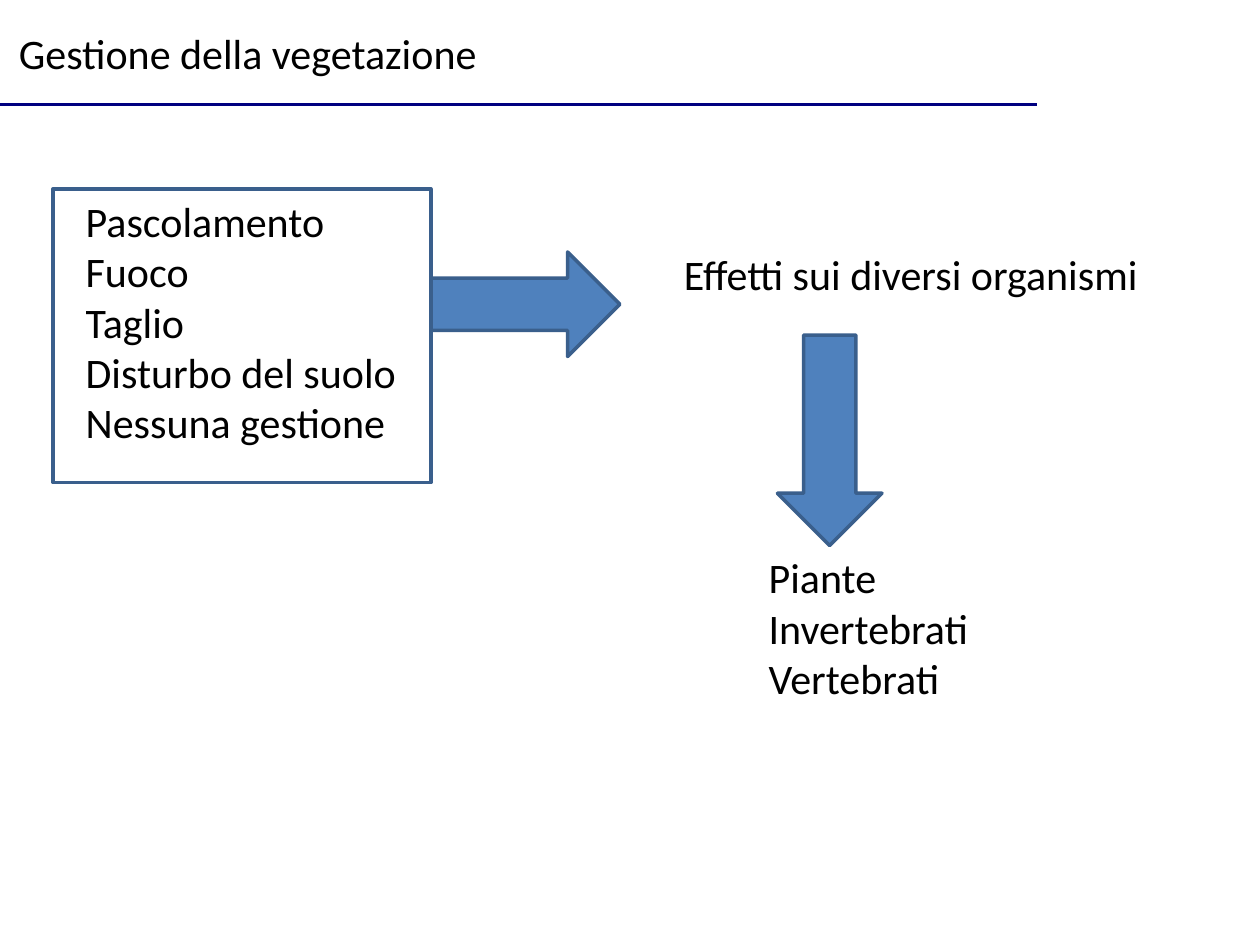
from lxml import etree
from pptx import Presentation
from pptx.dml.color import RGBColor
from pptx.enum.shapes import MSO_CONNECTOR, MSO_SHAPE
from pptx.enum.text import MSO_ANCHOR, MSO_AUTO_SIZE, PP_ALIGN
from pptx.oxml.ns import qn
from pptx.util import Inches, Pt

STRAIGHT = MSO_CONNECTOR.STRAIGHT
RIGHT_ARROW = MSO_SHAPE.RIGHT_ARROW
RECTANGLE = MSO_SHAPE.RECTANGLE
TOP = MSO_ANCHOR.TOP
NO_AUTO_SIZE = MSO_AUTO_SIZE.NONE
LEFT = PP_ALIGN.LEFT

FONT = "Calibri"
TEXT_SIZE = 24
LINE_WIDTH = 2
BLACK = "000000"
NAVY = "000080"
BLUE = "4F81BD"
DARK_BLUE = "3A5F8C"

MANAGEMENT = ["Pascolamento", "Fuoco", "Taglio", "Disturbo del suolo", "Nessuna gestione"]
ORGANISMS = ["Piante", "Invertebrati", "Vertebrati"]


def set_color(color_format, color):
    color_format.rgb = RGBColor.from_string(color)


def set_line(line, color):
    set_color(line.color, color)
    line.width = Pt(LINE_WIDTH)


def place(shape, left, top, width, height):
    shape.left, shape.top = Inches(left), Inches(top)
    shape.width, shape.height = Inches(width), Inches(height)


def remove_bullet(paragraph):
    properties = paragraph._p.get_or_add_pPr()
    properties.set("marL", "0")
    properties.set("indent", "0")
    etree.SubElement(properties, qn("a:buNone"))


def write_lines(shape, lines, wrap=True):
    text_frame = shape.text_frame
    text_frame.word_wrap = wrap
    text_frame.auto_size = NO_AUTO_SIZE
    text_frame.vertical_anchor = TOP
    for index, line in enumerate(lines):
        paragraph = text_frame.add_paragraph() if index else text_frame.paragraphs[0]
        paragraph.alignment = LEFT
        paragraph.space_before = Pt(0)
        remove_bullet(paragraph)
        run = paragraph.add_run()
        run.text = line
        run.font.name = FONT
        run.font.size = Pt(TEXT_SIZE)
        set_color(run.font.color, BLACK)


def fill_placeholder(shape, lines, left, top, width, height, wrap=True):
    place(shape, left, top, width, height)
    write_lines(shape, lines, wrap)


def add_text(slide, lines, left, top, width, height):
    shape = slide.shapes.add_textbox(
        Inches(left), Inches(top), Inches(width), Inches(height))
    write_lines(shape, lines)


def add_rule(slide, left, right, top):
    connector = slide.shapes.add_connector(
        STRAIGHT, Inches(left), Inches(top), Inches(right), Inches(top))
    set_line(connector.line, NAVY)
    etree.SubElement(connector._element.spPr, qn("a:effectLst"))


def add_outlined_shape(slide, kind, left, top, width, height, fill=None, rotation=0):
    shape = slide.shapes.add_shape(
        kind, Inches(left), Inches(top), Inches(width), Inches(height))
    shape.shadow.inherit = False
    shape.rotation = rotation
    if fill:
        shape.fill.solid()
        set_color(shape.fill.fore_color, fill)
    else:
        shape.fill.background()
    set_line(shape.line, DARK_BLUE)


def main():
    presentation = Presentation()
    presentation.slide_width = Inches(10)
    presentation.slide_height = Inches(7.5)
    slide = presentation.slides.add_slide(
        presentation.slide_layouts.get_by_name("Two Content"))
    title, management, organisms = list(slide.placeholders)[:3]

    fill_placeholder(title, ["Gestione della vegetazione"], 0.05, 0.17, 3.87, 0.5, wrap=False)
    fill_placeholder(management, MANAGEMENT, 0.58, 1.5, 3.25, 2.12)
    fill_placeholder(organisms, ORGANISMS, 6, 4.33, 2.67, 1.31)
    add_text(slide, ["Effetti sui diversi organismi"], 5.33, 1.92, 4, 0.5)

    add_rule(slide, 0, 8.23, 0.83)
    add_outlined_shape(slide, RIGHT_ARROW, 3.42, 2, 1.5, 0.83, BLUE)
    add_outlined_shape(slide, RIGHT_ARROW, 5.75, 3.08, 1.67, 0.83, BLUE, rotation=90)
    add_outlined_shape(slide, RECTANGLE, 0.42, 1.5, 3, 2.33)

    presentation.save("out.pptx")


if __name__ == "__main__":
    main()
